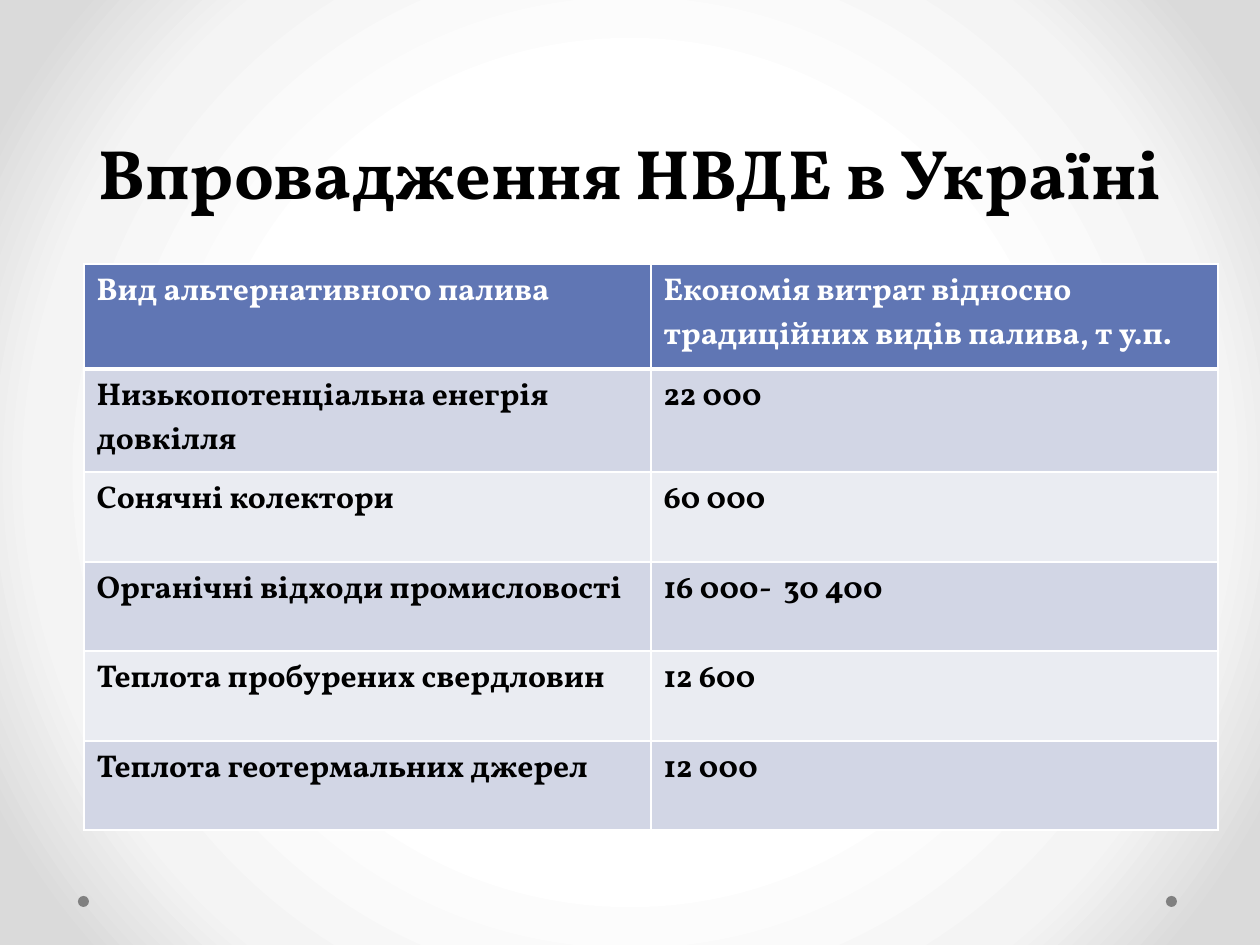
from lxml import etree
from pptx import Presentation
from pptx import util as u
from pptx.dml import color
from pptx.enum import shapes, text
from pptx.oxml import ns

PX = u.Inches(1) / 126
FONT = "Vollkorn"
WHITE, BLACK, GRAY = "FFFFFF", "000000", "808080"
HEADER, BANDS = "6076B4", ("D2D6E5", "EAECF2")
BACKGROUND_STOPS = ((50, "FFFFFF"), (76, "F4F4F4"), (92, "DADADA"))

ROWS = (
    ("Вид альтернативного палива", "Економія витрат відносно традиційних видів палива, т у.п."),
    ("Низькопотенціальна енегрія довкілля", "22 000"),
    ("Сонячні колектори", "60 000"),
    ("Органічні відходи промисловості", "16 000-  30 400"),
    ("Теплота пробурених свердловин", "12 600"),
    ("Теплота геотермальних джерел", "12 000"),
)
ROW_HEIGHTS = (105, 103, 90, 89, 90, 89)


def px(value):
    return u.Emu(round(value * PX))


def rgb(value):
    return color.RGBColor.from_string(value)


def add_xml(parent, tag, **attributes):
    return etree.SubElement(parent, ns.qn(tag), {key: str(value) for key, value in attributes.items()})


class SlideBuilder:
    def __init__(self, slide, font):
        self.slide = slide
        self.font = font

    def style(self, paragraph, size, font_color):
        paragraph.font.name = self.font
        paragraph.font.size = u.Pt(size)
        paragraph.font.bold = True
        paragraph.font.color.rgb = rgb(font_color)

    def background(self, stops):
        self.slide.background.fill.gradient()
        gradient = self.slide.element.find(".//" + ns.qn("a:gradFill"))
        for child in list(gradient):
            gradient.remove(child)
        stop_list = add_xml(gradient, "a:gsLst")
        for position, stop_color in stops:
            stop = add_xml(stop_list, "a:gs", pos=position * 1000)
            add_xml(stop, "a:srgbClr", val=stop_color)
        circle = add_xml(gradient, "a:path", path="circle")
        add_xml(circle, "a:fillToRect", l=50000, t=50000, r=50000, b=50000)

    def dot(self, left, top, size):
        shape = self.slide.shapes.add_shape(
            shapes.MSO_SHAPE.OVAL, px(left), px(top), px(size), px(size))
        shape.shadow.inherit = False
        shape.fill.solid()
        shape.fill.fore_color.rgb = rgb(GRAY)
        shape.line.fill.background()

    def title(self, wording, left, top, width, height):
        shape = self.slide.shapes.title
        shape.left, shape.top, shape.width, shape.height = map(px, (left, top, width, height))
        frame = shape.text_frame
        frame.text = wording
        frame.word_wrap = True
        frame.vertical_anchor = text.MSO_ANCHOR.BOTTOM
        paragraph = frame.paragraphs[0]
        paragraph.alignment = text.PP_ALIGN.CENTER
        paragraph.line_spacing = u.Pt(58)
        self.style(paragraph, 40, BLACK)

    def borders(self, cell, **widths):
        properties = cell._tc.get_or_add_tcPr()
        for side in "LRTB":
            line = add_xml(properties, f"a:ln{side}", w=u.Pt(widths.get(side, 1)))
            fill = add_xml(line, "a:solidFill")
            add_xml(fill, "a:srgbClr", val=WHITE)

    def table(self, rows, heights, left, top, width):
        columns = len(rows[0])
        table = self.slide.shapes.add_table(
            len(rows), columns, px(left), px(top), px(width), px(sum(heights))).table
        for column in table.columns:
            column.width = px(width / columns)
        for index, (row, height) in enumerate(zip(rows, heights)):
            table.rows[index].height = px(height)
            for cell, wording in zip(table.rows[index].cells, row):
                cell.text = wording
                self.borders(cell, T=3 if index == 1 else 1, B=3 if index == 0 else 1)
                cell.fill.solid()
                cell.fill.fore_color.rgb = rgb(BANDS[(index - 1) % 2] if index else HEADER)
                self.style(cell.text_frame.paragraphs[0], 18, BLACK if index else WHITE)


def main():
    presentation = Presentation()
    presentation.slide_width, presentation.slide_height = px(1260), px(945)
    builder = SlideBuilder(presentation.slides.add_slide(presentation.slide_layouts[5]), FONT)
    builder.background(BACKGROUND_STOPS)
    for left in (1166, 78):
        builder.dot(left, 896, 11)
    builder.title("Впровадження НВДЕ в Україні", 63, 0, 1134, 220)
    builder.table(ROWS, ROW_HEIGHTS, 84, 264, 1134)
    presentation.save("out.pptx")


if __name__ == "__main__":
    main()
